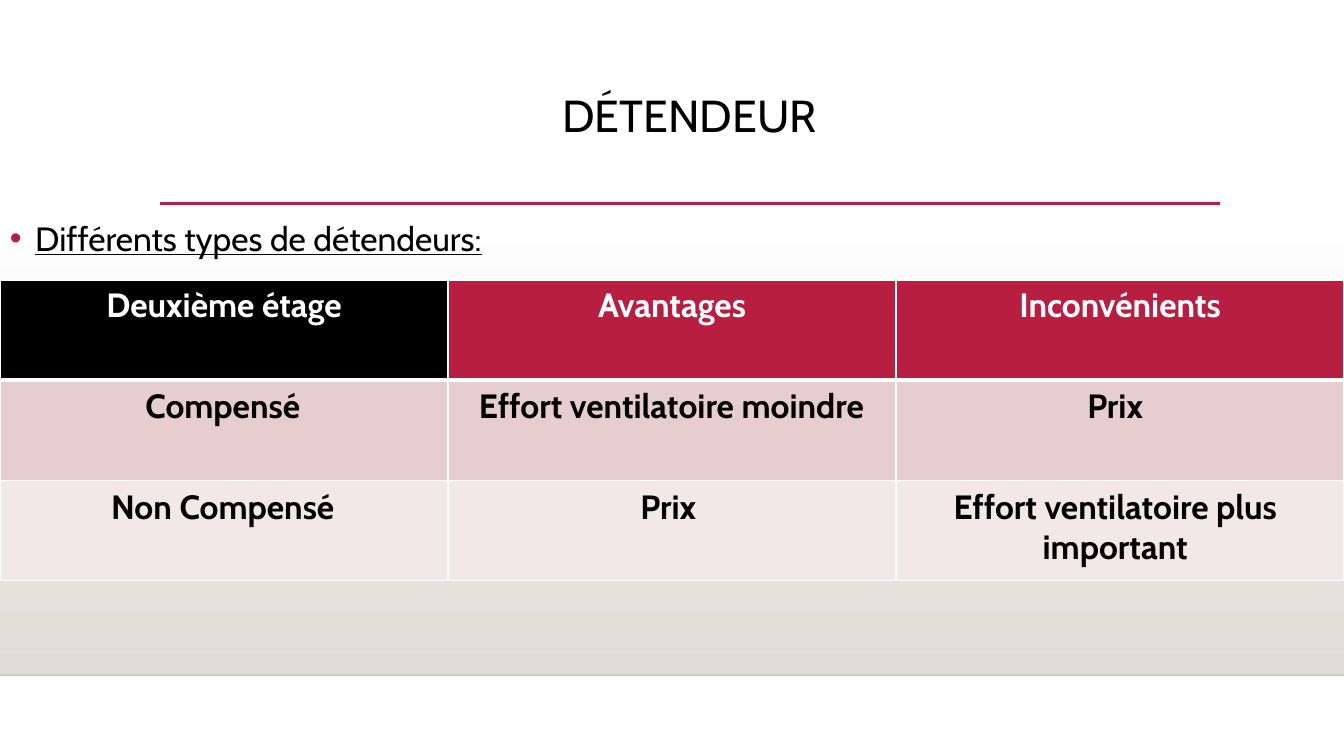
from lxml.etree import SubElement as Sub
from pptx import Presentation
from pptx.dml.color import RGBColor as Rgb
from pptx.enum.shapes import MSO_CONNECTOR as Conn, MSO_SHAPE as Form
from pptx.enum.text import MSO_ANCHOR as Anchor, PP_ALIGN as Align
from pptx.oxml.ns import qn
from pptx.util import Inches, Pt

HUES = {"ink": "000000", "edge": "000001", "white": "FFFFFF", "red": "B71E42",
        "sand": "DFDBD5", "rose": "E6CDCF", "pale": "F3E8E9"}
HEADS = ["Deuxième étage", "Avantages", "Inconvénients"]
FILLS = [["ink", "red", "red"], ["rose"] * 3, ["pale"] * 3]
LEFT, TOP, ROW, WIDE = 11.93, 37.07, 13.24, 33.15
LABELS = [("Compensé", 0, 1, 1), ("Non Compensé", 0, 2, 1),
          ("Effort ventilatoire moindre", 33.38, 1, 1),
          ("Effort ventilatoire plus important", 66.4, 2, 2),
          ("Prix", 66.4, 1, 1), ("Prix", 33.15, 2, 1)]


class Deck:
    """Draws styled elements on one slide, placed in percent of its size."""

    def __init__(self, font):
        self.font = font
        self.prs = Presentation()
        self.prs.slide_width, self.prs.slide_height = Inches(13.33), Inches(7.5)
        self.page = self.prs.slides.add_slide(self.prs.slide_layouts[6])
        self.items = self.page.shapes

    def spot(self, x, y, w, h):
        wide, high = self.prs.slide_width, self.prs.slide_height
        return [int(n * full / 100) for n, full in zip((x, y, w, h), (wide, high) * 2)]

    def hue(self, name):
        return Rgb.from_string(HUES[name])

    def fade(self, x, y, w, h, start, end):
        band = self.items.add_shape(Form.RECTANGLE, *self.spot(x, y, w, h))
        band.shadow.inherit = False
        band.line.fill.background()
        band.fill.gradient()
        band.fill.gradient_angle = 270
        for stop, name in zip(band.fill.gradient_stops, (start, end)):
            stop.color.rgb = self.hue(name)

    def rule(self, x, y, w, name, size, alpha=100):
        left, top, span, _ = self.spot(x, y, w, 0)
        line = self.items.add_connector(Conn.STRAIGHT, left, top, left + span, top)
        line.line.color.rgb = self.hue(name)
        line.line.width = Pt(size)
        props = line._element.spPr
        Sub(props, qn("a:effectLst"))
        if alpha < 100:
            tint = props.find(".//" + qn("a:srgbClr"))
            Sub(tint, qn("a:alpha"), val=str(alpha * 1000))

    def style(self, para, size, name="ink", bold=False, align=Align.CENTER):
        para.alignment = align
        font = para.font
        font.name, font.size, font.bold = self.font, Pt(size), bold
        font.color.rgb = self.hue(name)

    def text(self, words, x, y, w, h, size=24, bold=False, space=1.0, align=Align.CENTER):
        frame = self.items.add_textbox(*self.spot(x, y, w, h)).text_frame
        frame.word_wrap = True
        frame.vertical_anchor = Anchor.TOP
        para = frame.paragraphs[0]
        para.text = words
        para.line_spacing = space
        self.style(para, size, bold=bold, align=align)
        return para

    def bullet(self, words, x, y, w, h):
        para = self.text(words, x, y, w, h, space=1.2, align=Align.LEFT)
        para.font.underline = True
        props = para._p.get_or_add_pPr()
        props.set("marL", str(Inches(0.25)))
        props.set("indent", str(-Inches(0.25)))
        tint = Sub(props, qn("a:buClr"))
        Sub(tint, qn("a:srgbClr"), val=HUES["red"])
        Sub(props, qn("a:buFont"), typeface="Arial")
        Sub(props, qn("a:buChar"), char="•")
        props.append(props.find(qn("a:defRPr")))

    def edges(self, cell, base):
        props = cell._tc.get_or_add_tcPr()
        for side, size in zip("LRTB", (1, 1, 1, base)):
            line = Sub(props, qn("a:ln" + side), w=str(Pt(size)))
            fill = Sub(line, qn("a:solidFill"))
            Sub(fill, qn("a:srgbClr"), val=HUES["white"])

    def table(self, heads, fills, x, y, w, h):
        grid = self.items.add_table(len(fills), len(heads), *self.spot(x, y, w, h)).table
        for r, names in enumerate(fills):
            for c, name in enumerate(names):
                cell = grid.cell(r, c)
                self.edges(cell, 1 if r else 3)
                cell.fill.solid()
                cell.fill.fore_color.rgb = self.hue(name)
                if r == 0:
                    cell.text = heads[c]
                    self.style(cell.text_frame.paragraphs[0], 24, "white", True)


def main():
    deck = Deck("Cabin")
    deck.fade(0, 29.47, 100, 59.87, "white", "sand")
    deck.rule(0, 89.33, 100, "edge", 1, 20)
    deck.rule(LEFT, 26.93, 78.84, "red", 2.5)
    deck.text("DÉTENDEUR", LEFT, 11.73, 78.77, 15.33, 32, space=0.9)
    deck.bullet("Différents types de détendeurs:", 0, 27.07, 90.7, 10)
    deck.table(HEADS, FILLS, 0, TOP, 100, 3 * ROW)
    for words, x, row, lines in LABELS:
        deck.text(words, x, TOP + row * ROW, WIDE, 1.2 + 5.47 * lines, bold=True)
    deck.prs.save("out.pptx")


if __name__ == "__main__":
    main()
